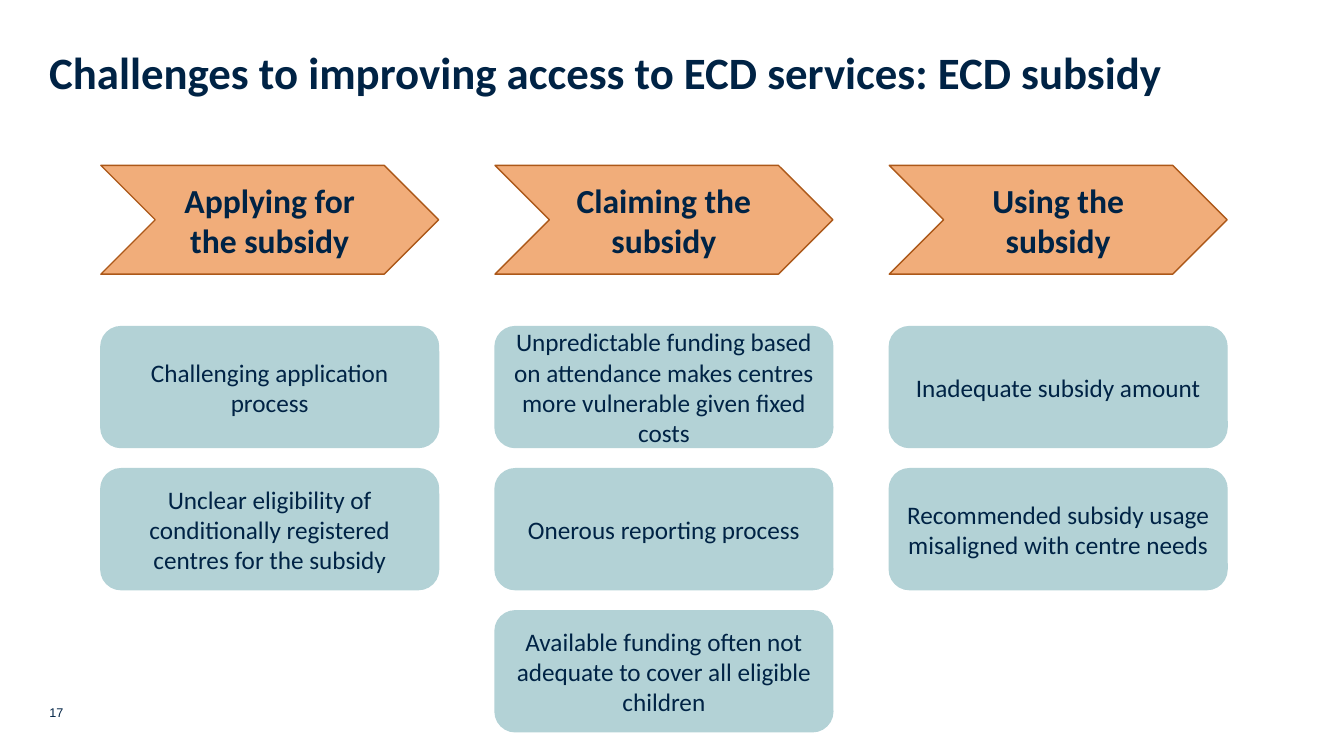
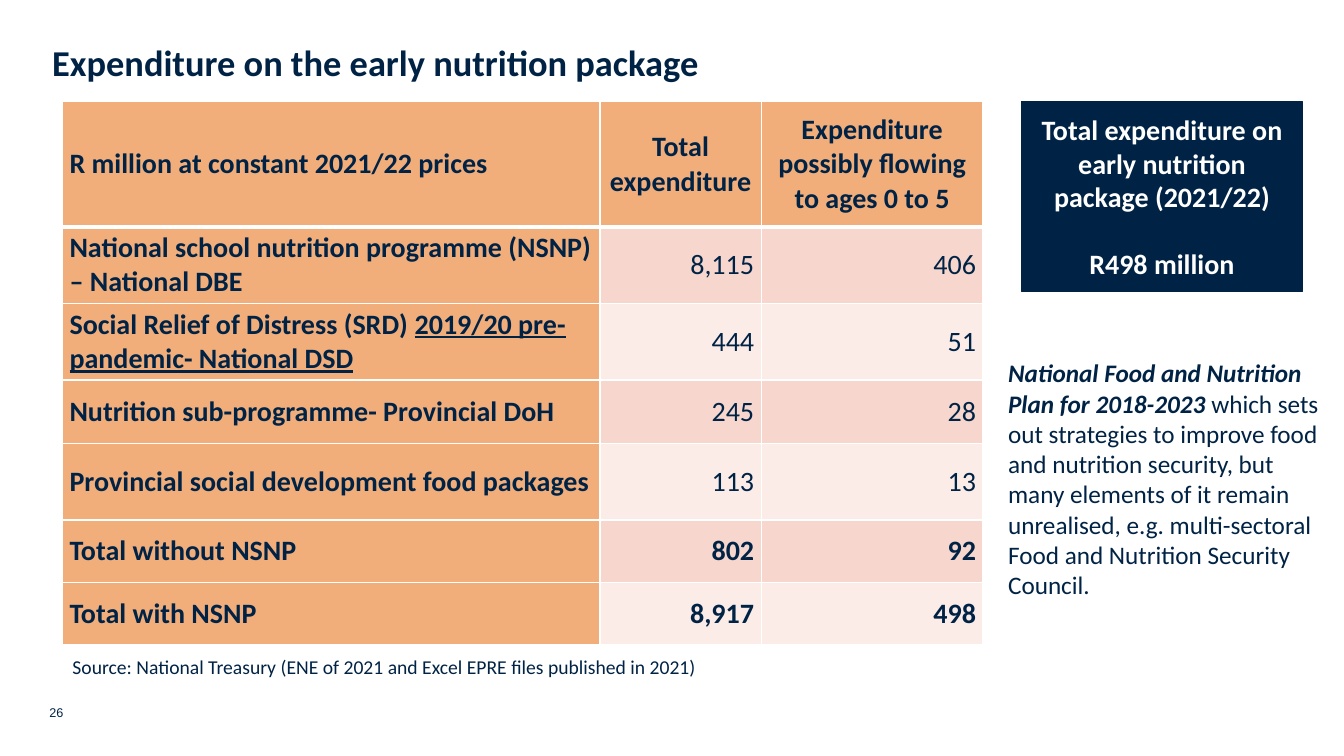
"""Build two slides on early childhood subsidy challenges and nutrition spending."""
from lxml.etree import SubElement
from pptx import Presentation
from pptx.dml.color import RGBColor
from pptx.enum.shapes import MSO_SHAPE
from pptx.enum.text import MSO_ANCHOR, PP_ALIGN
from pptx.oxml.ns import qn
from pptx.util import Inches, Pt

NAVY = RGBColor(0x00, 0x23, 0x45)
WHITE = RGBColor(0xFF, 0xFF, 0xFF)
ORANGE = RGBColor(0xF1, 0xAD, 0x7A)
RUST = RGBColor(0xAC, 0x58, 0x19)
TEAL = RGBColor(0xB3, 0xD2, 0xD6)
ROW_TINTS = (RGBColor(0xF6, 0xD6, 0xCD), RGBColor(0xFB, 0xEC, 0xE8))

STAGES = [
    ("Applying for the subsidy", [
        "Challenging application process",
        "Unclear eligibility of conditionally registered centres for the subsidy",
    ]),
    ("Claiming the subsidy", [
        "Unpredictable funding based on attendance makes centres more vulnerable given fixed costs",
        "Onerous reporting process",
        "Available funding often not adequate to cover all eligible children",
    ]),
    ("Using the subsidy", [
        "Inadequate subsidy amount",
        "Recommended subsidy usage misaligned with centre needs",
    ]),
]
STAGE_LEFT, STAGE_WIDTH, STAGE_GAP = 1, 3.35, 0.56
CHEVRON_TOP, CHEVRON_HEIGHT = 1.64, 1.08
CARD_TOP, CARD_HEIGHT, CARD_GAP = 3.24, 1.2, 0.21

HEADER = ["R million at constant 2021/22 prices", "Total expenditure",
          "Expenditure possibly flowing to ages 0 to 5"]
EXPENDITURE = [
    (["National school nutrition programme (NSNP) – National DBE"], "8,115", "406"),
    (["Social Relief of Distress (SRD) ", "2019/20 pre-pandemic- National DSD"], "444", "51"),
    (["Nutrition sub-programme- Provincial DoH"], "245", "28"),
    (["Provincial social development food packages"], "113", "13"),
    (["Total without NSNP"], "802", "92"),
    (["Total with NSNP"], "8,917", "498"),
]
COLUMN_WIDTHS = [5.33, 1.6, 2.2]
ROW_HEIGHTS = [1.24, 0.76, 0.76, 0.63, 0.76, 0.62, 0.62]
TOTAL_BOX = ["Total expenditure on early nutrition package (2021/22)", "R498 million"]
SOURCE = "Source: National Treasury (ENE of 2021 and Excel EPRE files published in 2021)"
PLAN_NAME = "National Food and Nutrition Plan for 2018-2023 "
PLAN_REMARK = ("which sets out strategies to improve food and nutrition security, but many elements "
               "of it remain unrealised, e.g. multi-sectoral Food and Nutrition Security Council.")


def set_font(paragraph, size, bold=None, color=NAVY, name="Calibri"):
    font = paragraph.font
    font.name, font.size, font.bold = name, Pt(size), bold
    font.color.rgb = color


def add_text(slide, box, text, size, **style):
    frame = slide.shapes.add_textbox(*map(Inches, box)).text_frame
    frame.word_wrap = True
    paragraph = frame.paragraphs[0]
    paragraph.text = text
    set_font(paragraph, size, **style)
    return paragraph


def add_box(slide, preset, box, fill, line, texts, size, **style):
    shape = slide.shapes.add_shape(preset, *map(Inches, box))
    shape.shadow.inherit = False
    shape.fill.solid()
    shape.fill.fore_color.rgb = fill
    shape.line.color.rgb = line
    shape.line.width = Pt(1)
    frame = shape.text_frame
    frame.word_wrap = True
    frame.vertical_anchor = MSO_ANCHOR.MIDDLE
    frame.text = "\n".join(texts)
    for paragraph in frame.paragraphs:
        paragraph.alignment = PP_ALIGN.CENTER
        set_font(paragraph, size, **style)
    return frame


def add_slide(presentation, title, title_box, title_size, number):
    slide = presentation.slides.add_slide(presentation.slide_layouts[6])
    add_text(slide, title_box, title, title_size, bold=True).line_spacing = 0.9
    add_text(slide, (0.39, 6.94, 1.58, 0.25), number, 9, name="Arial")
    return slide


def style_cell(cell, runs, alignment, fill, bold, top=1, bottom=1):
    cell.margin_left = cell.margin_right = Inches(0.07)
    cell.margin_top = cell.margin_bottom = 0
    cell.vertical_anchor = MSO_ANCHOR.MIDDLE
    properties = cell._tc.get_or_add_tcPr()
    for side, width in (("L", 1), ("R", 1), ("T", top), ("B", bottom)):
        border = SubElement(properties, qn(f"a:ln{side}"), w=str(Pt(width)))
        SubElement(SubElement(border, qn("a:solidFill")), qn("a:srgbClr"), val=str(WHITE))
    cell.fill.solid()
    cell.fill.fore_color.rgb = fill
    paragraph = cell.text_frame.paragraphs[0]
    paragraph.alignment = alignment
    set_font(paragraph, 20, bold)
    for index, text in enumerate(runs):
        run = paragraph.add_run()
        run.text = text
        run.font.size, run.font.name, run.font.bold = Pt(20), "Calibri", bold
        run.font.color.rgb = NAVY
        if index:
            run.font.underline = True


def add_expenditure_table(slide):
    table = slide.shapes.add_table(
        len(ROW_HEIGHTS), len(COLUMN_WIDTHS), Inches(0.62), Inches(1.01),
        Inches(sum(COLUMN_WIDTHS)), Inches(sum(ROW_HEIGHTS))).table
    for column, width in zip(table.columns, COLUMN_WIDTHS):
        column.width = Inches(width)
    for row, height in zip(table.rows, ROW_HEIGHTS):
        row.height = Inches(height)
    for index, heading in enumerate(HEADER):
        alignment = PP_ALIGN.CENTER if index else PP_ALIGN.LEFT
        style_cell(table.cell(0, index), [heading], alignment, ORANGE, True, bottom=3)
    for row, (label, *amounts) in enumerate(EXPENDITURE, start=1):
        top = 3 if row == 1 else 1
        style_cell(table.cell(row, 0), label, PP_ALIGN.LEFT, ORANGE, True, top)
        for column, amount in enumerate(amounts, start=1):
            style_cell(table.cell(row, column), [amount], PP_ALIGN.RIGHT,
                       ROW_TINTS[(row - 1) % 2], label[0].startswith("Total"), top)


def build_subsidy_slide(presentation):
    slide = add_slide(presentation, "Challenges to improving access to ECD services: ECD subsidy",
                      (0.39, 0.45, 12.94, 1.08), 32, "17")
    for column, (stage, challenges) in enumerate(STAGES):
        left = STAGE_LEFT + column * (STAGE_WIDTH + STAGE_GAP)
        add_box(slide, MSO_SHAPE.CHEVRON, (left, CHEVRON_TOP, STAGE_WIDTH, CHEVRON_HEIGHT),
                ORANGE, RUST, [stage], 24, bold=True)
        for row, challenge in enumerate(challenges):
            top = CARD_TOP + row * (CARD_HEIGHT + CARD_GAP)
            add_box(slide, MSO_SHAPE.ROUNDED_RECTANGLE, (left, top, STAGE_WIDTH, CARD_HEIGHT),
                    TEAL, TEAL, [challenge], 18)


def build_nutrition_slide(presentation):
    slide = add_slide(presentation, "Expenditure on the early nutrition package",
                      (0.42, 0.4, 12.53, 1.08), 26, "26")
    add_expenditure_table(slide)
    total = add_box(slide, MSO_SHAPE.RECTANGLE, (10.13, 1.01, 2.79, 1.88), NAVY, NAVY,
                    TOTAL_BOX, 20, bold=True, color=WHITE)
    total.paragraphs[1].space_before = Pt(24)
    add_text(slide, (0.62, 6.49, 6.75, 0.3), SOURCE, 14).line_spacing = Pt(13.8)
    plan = add_text(slide, (9.9, 3.5, 3.31, 2.52), PLAN_NAME, 18)
    plan.runs[0].font.bold = plan.runs[0].font.italic = True
    plan.add_run().text = PLAN_REMARK


def main():
    presentation = Presentation()
    presentation.slide_width, presentation.slide_height = Inches(13.33), Inches(7.5)
    build_subsidy_slide(presentation)
    build_nutrition_slide(presentation)
    presentation.save("out.pptx")


if __name__ == "__main__":
    main()
